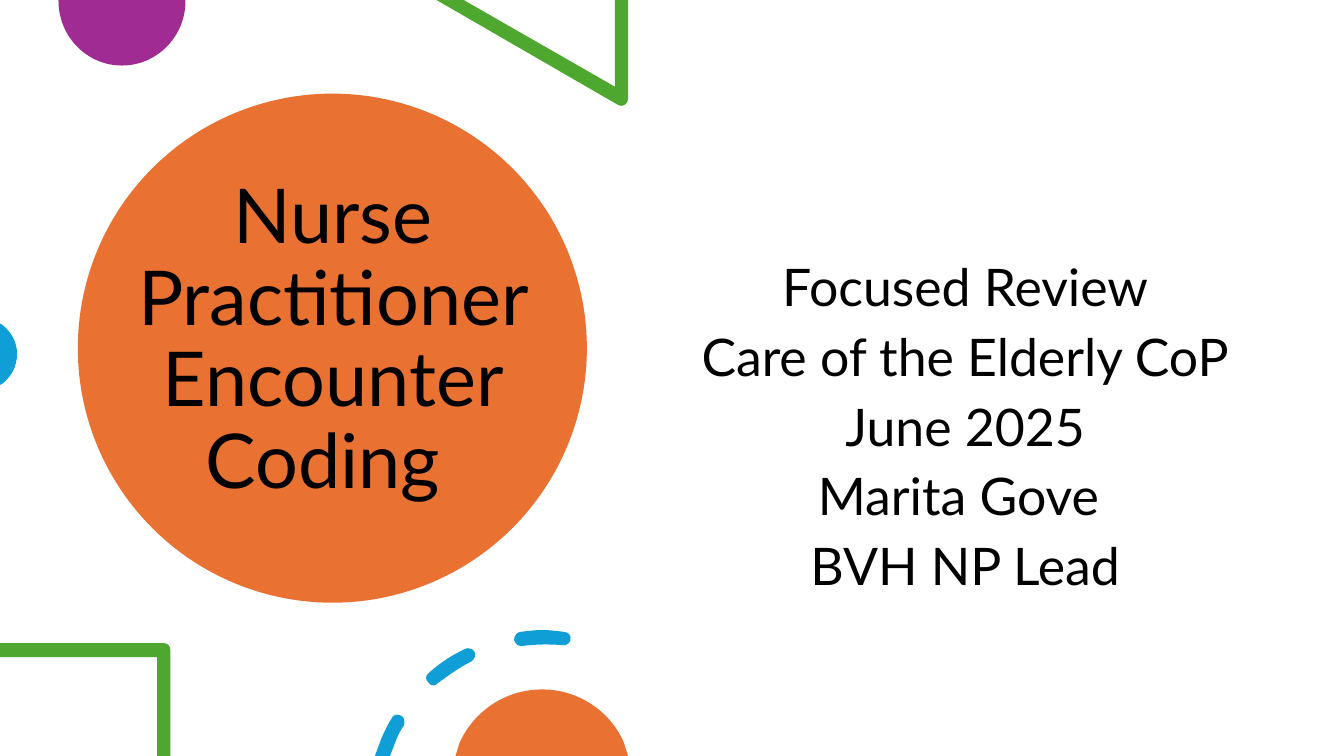
from lxml.etree import SubElement
from pptx import Presentation
from pptx.dml.color import RGBColor
from pptx.enum.shapes import MSO_SHAPE
from pptx.enum.text import MSO_ANCHOR, PP_ALIGN
from pptx.oxml.ns import qn
from pptx.util import Pt

COLORS = {
    "orange": "E97132",
    "purple": "A02B93",
    "green": "4EA72E",
    "blue": "0F9ED5",
    "black": "000000",
}

DOT = [(132.5, 0), (41.8, 0), (41.8, 0.7),
       (41.8, 25.9, 61.9, 46.8, 87.1, 46.8), (112.3, 46.8, 132.5, 25.9, 132.5, 0.7)]
WEDGE = [(448.6, 0), (439.2, 0), (439.2, 61.9), (331.2, 0), (311.8, 0), (441.4, 74.9),
         (442.1, 75.6, 442.8, 75.6, 443.5, 75.6), (446.4, 75.6, 448.6, 73.4, 448.6, 70.6)]
EDGE = [(0, 231.1), (0, 275), (1.4, 274.3),
        (7.9, 269.3, 12.2, 262.1, 12.2, 252.7), (12.2, 244.1, 7.9, 236.9, 1.4, 231.8)]
FRAME = [(117.4, 459.4), (0, 459.4), (0, 469.4), (112.3, 469.4), (112.3, 540),
         (121.7, 540), (121.7, 464.4), (121.7, 461.5, 119.5, 459.4, 117.4, 459.4)]
DASHES = [
    [(284.4, 510.5), (283, 509.8, 280.8, 511.2, 280.1, 512.6),
     (277.2, 517, 275, 522, 272.9, 526.3), (267.8, 540), (278.6, 540), (282.2, 530.6),
     (283.7, 526.3, 285.8, 522, 288.7, 517.7), (289.4, 515.5, 288.7, 511.9, 286.6, 511.2),
     (285.8, 510.5, 285.1, 510.5, 284.4, 510.5)],
    [(334.1, 463), (333.4, 463, 332.6, 463, 331.9, 463.7),
     (322.6, 468, 313.9, 473.8, 306, 481), (303.8, 482.4, 303.8, 486, 306, 487.4),
     (306.7, 488.9, 308.2, 489.6, 309.6, 489.6), (311, 489.6, 311.8, 488.9, 312.5, 488.2),
     (320.4, 482.4, 328.3, 476.6, 337, 472.3), (339.1, 470.9, 339.8, 468, 339.1, 465.8),
     (337.7, 463.7, 336.2, 463, 334.1, 463)],
    [(387.4, 450), (382.3, 450, 377.3, 450.7, 371.5, 451.4),
     (369.4, 451.4, 367.2, 454.3, 367.2, 457.2), (367.9, 459.4, 370.1, 461.5, 372.2, 461.5),
     (383, 460.1, 392.4, 460.1, 401.8, 460.8), (404.6, 461.5, 406.8, 459.4, 407.5, 457.2),
     (408.2, 454.3, 406.1, 451.4, 403.2, 451.4), (398.2, 450.7, 392.4, 450, 387.4, 450)],
]
DOME = [(387.4, 492.5), (360.7, 492.5, 338.4, 508.3, 328.3, 530.6), (325.4, 540),
        (448.6, 540), (445.7, 530.6), (436.3, 508.3, 413.3, 492.5, 387.4, 492.5)]


def pairs(part):
    return [(Pt(x), Pt(y)) for x, y in zip(part[::2], part[1::2])]


class Deck:
    def __init__(self, font):
        self.font = font
        self.show = Presentation()
        self.show.slide_width, self.show.slide_height = Pt(960), Pt(540)
        self.slide = self.show.slides.add_slide(self.show.slide_layouts[6])

    def paint(self, shape, color):
        shape.shadow.inherit = False
        shape.fill.solid()
        shape.fill.fore_color.rgb = RGBColor.from_string(COLORS[color])
        shape.line.fill.background()

    def disc(self, x, y, size, color):
        box = [Pt(v) for v in (x, y, size, size)]
        self.paint(self.slide.shapes.add_shape(MSO_SHAPE.OVAL, *box), color)

    def form(self, color, *rings):
        pen = self.slide.shapes.build_freeform(*pairs(rings[0][0])[0])
        for i, ring in enumerate(rings):
            if i:
                pen.move_to(*pairs(ring[0])[0])
            pen.add_line_segments([p for part in ring[1:] for p in pairs(part)], close=True)
        shape = pen.convert_to_shape()
        self.bend(shape, [part for ring in rings for part in ring[1:]])
        self.paint(shape, color)

    def bend(self, shape, parts):
        lines = iter(list(shape.element.iter(qn("a:lnTo"))))
        for part in parts:
            group = [next(lines) for _ in range(len(part) // 2)]
            if len(group) == 3:
                home = group[0].getparent()
                curve = SubElement(home, qn("a:cubicBezTo"))
                group[0].addprevious(curve)
                for line in group:
                    curve.append(line[0])
                    home.remove(line)

    def text(self, box, lines, size, anchor, left=7.2, bottom=3.6, gap=0):
        frame = self.slide.shapes.add_textbox(*[Pt(v) for v in box]).text_frame
        frame.word_wrap = True
        frame.vertical_anchor = anchor
        frame.margin_left, frame.margin_bottom = Pt(left), Pt(bottom)
        frame.text = "\n".join(lines)
        for para in frame.paragraphs:
            para.alignment = PP_ALIGN.CENTER
            para.line_spacing = 0.9
            para.space_before = Pt(gap)
            for run in para.runs:
                run.font.name = self.font
                run.font.size = Pt(size)
                run.font.color.rgb = RGBColor.from_string(COLORS["black"])


def main():
    deck = Deck("Lato")
    deck.disc(55.6, 66.9, 363.6, "orange")
    deck.text((67, 97.2, 341.3, 320.4), ["Nurse Practitioner Encounter Coding "],
              54, MSO_ANCHOR.MIDDLE, bottom=30.5)
    deck.form("purple", DOT)
    deck.form("green", WEDGE)
    deck.form("blue", EDGE)
    deck.text((480.2, 183.2, 414, 267.1),
              ["Focused Review", "Care of the Elderly CoP", "June 2025",
               "Marita Gove ", "BVH NP Lead"],
              37, MSO_ANCHOR.TOP, left=11.5, gap=10)
    deck.form("green", FRAME)
    deck.form("blue", *DASHES)
    deck.form("orange", DOME)
    deck.show.save("out.pptx")


if __name__ == "__main__":
    main()
